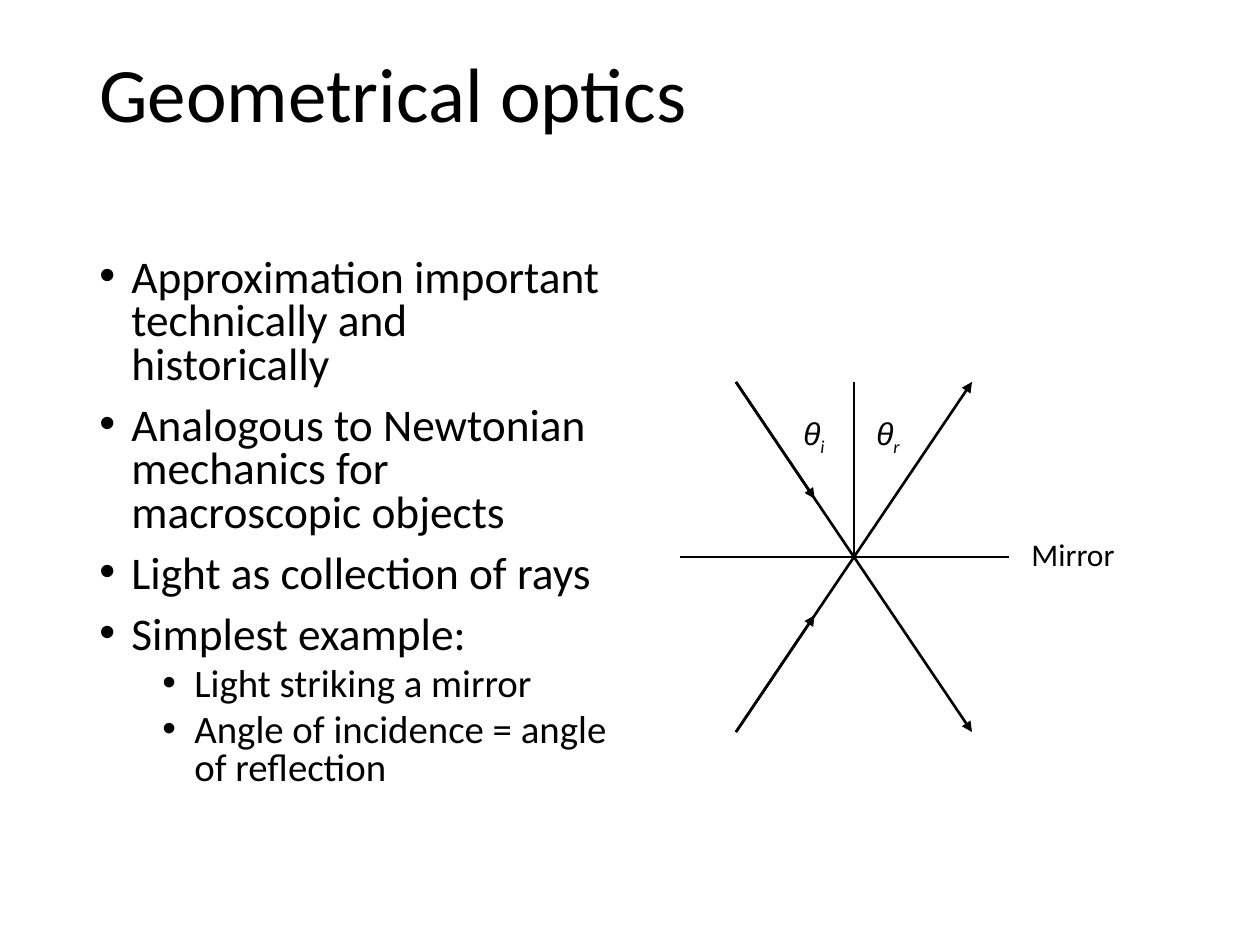
from lxml import etree
from pptx import Presentation
from pptx.dml.color import RGBColor
from pptx.enum.shapes import MSO_CONNECTOR
from pptx.oxml.ns import qn
from pptx.util import Pt

STRAIGHT = MSO_CONNECTOR.STRAIGHT
SCALE = 914400 / 126  # EMU per px
COLORS = {"ink": "000000", "paper": "FFFFFF"}
BODY_FONT, SYMBOL_FONT = "Calibri", "Arial"

TITLE = "Geometrical optics"
BULLETS = [  # level, text
    (0, "Approximation important technically and historically"),
    (0, "Analogous to Newtonian mechanics for macroscopic objects"),
    (0, "Light as collection of rays"),
    (0, "Simplest example:"),
    (1, "Light striking a mirror"),
    (1, "Angle of incidence = angle of reflection"),
]
LEVELS = [  # size, space before in points; left indent in px
    {"size": 25.9, "before": 10, "indent": 32},
    {"size": 22.2, "before": 5, "indent": 95},
]
HANGING = 32
ANGLE_LABELS = [("i", 791), ("r", 864)]  # subscript, left

CENTER = (854, 557)
REACH = (118, 175)  # from the centre to the outer end of a ray
MIRROR_ENDS = (680, 1009)


def px(value):
    return round(value * SCALE)


def color(name):
    return RGBColor.from_string(COLORS[name])


def add_text_box(slide, left, top, width, height, wrap=False):
    box = slide.shapes.add_textbox(px(left), px(top), px(width), px(height))
    box.text_frame.word_wrap = wrap
    return box.text_frame


def style_font(font, size, name=BODY_FONT, italic=None):
    font.size = Pt(size)
    font.name = name
    font.italic = italic
    font.color.rgb = color("ink")


def add_bullet(paragraph, indent):
    properties = paragraph._p.get_or_add_pPr()
    properties.set("marL", str(px(indent)))
    properties.set("indent", str(-px(HANGING)))
    etree.SubElement(properties, qn("a:buFont")).set("typeface", "Arial")
    etree.SubElement(properties, qn("a:buChar")).set("char", "•")


def add_line(slide, start, end, arrow=False):
    line = slide.shapes.add_connector(STRAIGHT, *map(px, (*start, *end)))
    line.line.width = Pt(1.5)
    line.line.color.rgb = color("ink")
    if arrow:
        outline = line.line._get_or_add_ln()
        etree.SubElement(outline, qn("a:tailEnd")).set("type", "triangle")
    etree.SubElement(line._element.spPr, qn("a:effectLst"))


def ray_point(across, down, share=1):
    """Point at a share of the reach, in the direction given by two signs."""
    return (CENTER[0] + across * share * REACH[0],
            CENTER[1] + down * share * REACH[1])


def add_text(slide):
    title = add_text_box(slide, 87, 50, 1086, 183, wrap=True).paragraphs[0]
    title.text = TITLE
    title.line_spacing = 0.9
    style_font(title.runs[0].font, 44)

    body = add_text_box(slide, 87, 252, 535, 600, wrap=True)
    body.text = "\n".join(text for _, text in BULLETS)
    for index, (level, _) in enumerate(BULLETS):
        paragraph, style = body.paragraphs[index], LEVELS[level]
        paragraph.level = level
        paragraph.line_spacing = 0.8
        paragraph.space_before = Pt(style["before"] if index else 0)
        add_bullet(paragraph, style["indent"])
        style_font(paragraph.runs[0].font, style["size"])


def add_diagram(slide):
    add_line(slide, (MIRROR_ENDS[0], CENTER[1]), (MIRROR_ENDS[1], CENTER[1]))
    add_line(slide, ray_point(0, -1), CENTER)
    for side in (-1, 1):  # above, then below the mirror
        source = ray_point(-1, side)
        add_line(slide, source, CENTER)
        add_line(slide, source, ray_point(-1, side, 1 / 3), arrow=True)
        add_line(slide, CENTER, ray_point(1, side), arrow=True)

    for subscript, left in ANGLE_LABELS:
        label = add_text_box(slide, left, 408, 56, 50, wrap=True)
        paragraph = label.paragraphs[0]
        for text, name in (("θ", SYMBOL_FONT), (subscript, BODY_FONT)):
            run = paragraph.add_run()
            run.text = text
            style_font(run.font, 18, name, italic=True)
        run.font._element.set("baseline", "-25000")

    mirror = add_text_box(slide, 1019, 529, 110, 50).paragraphs[0]
    mirror.text = "Mirror"
    style_font(mirror.runs[0].font, 18)


def main():
    presentation = Presentation()
    presentation.slide_width, presentation.slide_height = px(1260), px(945)
    slide = presentation.slides.add_slide(presentation.slide_layouts[6])
    slide.background.fill.solid()
    slide.background.fill.fore_color.rgb = color("paper")
    add_text(slide)
    add_diagram(slide)
    presentation.save("out.pptx")


if __name__ == "__main__":
    main()
